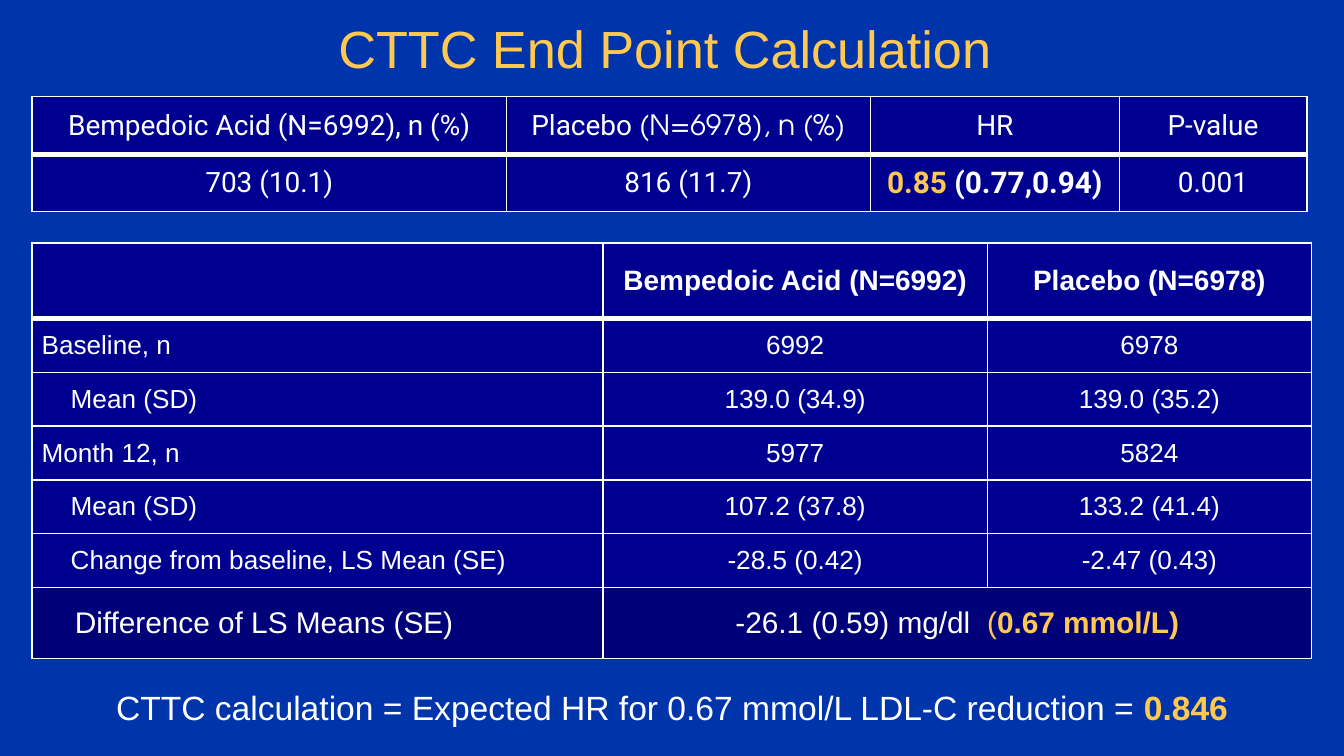
from dataclasses import dataclass

from lxml import etree
from pptx import Presentation
from pptx import util as u
from pptx.dml import color as dml
from pptx.enum import text as t
from pptx.oxml import ns

BLUE, NAVY, DARK_NAVY = "0034AA", "000090", "000078"
WHITE, GOLD, TITLE_GOLD = "FFFFFF", "FFC94F", "FFC850"
CENTER, LEFT = t.PP_ALIGN.CENTER, t.PP_ALIGN.LEFT


@dataclass(frozen=True)
class Span:
    text: str
    size: float
    font: str = "Arial"
    color: str = WHITE
    bold: bool = False


@dataclass(frozen=True)
class Cell:
    spans: tuple[Span, ...] = ()
    align: t.PP_ALIGN = CENTER
    indent: float = 0
    fill: str = NAVY


@dataclass(frozen=True)
class Grid:
    left: float
    top: float
    widths: tuple[float, ...]
    heights: tuple[float, ...]
    rows: list[list[Cell]]


def rgb(value: str) -> dml.RGBColor:
    return dml.RGBColor.from_string(value)


def write(para, spans: tuple[Span, ...], align: t.PP_ALIGN) -> None:
    para.alignment = align
    for span in spans:
        run = para.add_run()
        run.text = span.text
        run.font.size = u.Pt(span.size)
        run.font.name = span.font
        run.font.bold = span.bold
        run.font.color.rgb = rgb(span.color)


def add_text_shadow(run) -> None:
    fill = run.font._element.find(ns.qn("a:solidFill"))
    effects = etree.Element(ns.qn("a:effectLst"))
    shadow = etree.SubElement(effects, ns.qn("a:outerShdw"), blurRad="38100",
                              dist="38100", dir="2700000", algn="tl")
    shade = etree.SubElement(shadow, ns.qn("a:srgbClr"), val="000000")
    etree.SubElement(shade, ns.qn("a:alpha"), val="60000")
    fill.addnext(effects)


def set_borders(cell, top: float, bottom: float) -> None:
    """Give a cell white borders; left and right are always 1 point."""
    properties = cell._tc.get_or_add_tcPr()
    sides = {"L": 1, "R": 1, "T": top, "B": bottom}
    for index, (side, width) in enumerate(sides.items()):
        line = etree.Element(ns.qn(f"a:ln{side}"), w=str(u.Pt(width)))
        fill = etree.SubElement(line, ns.qn("a:solidFill"))
        etree.SubElement(fill, ns.qn("a:srgbClr"), val=WHITE)
        properties.insert(index, line)


def add_grid(page, grid: Grid):
    """Draw a table with a thick line under its first row."""
    frame = page.shapes.add_table(
        len(grid.heights), len(grid.widths), u.Pt(grid.left), u.Pt(grid.top),
        u.Pt(sum(grid.widths)), u.Pt(sum(grid.heights)))
    table = frame.table
    table.first_row = table.horz_banding = False
    for column, width in zip(table.columns, grid.widths):
        column.width = u.Pt(width)
    for row, height in zip(table.rows, grid.heights):
        row.height = u.Pt(height)
    for row_index, row in enumerate(grid.rows):
        for column_index, content in enumerate(row):
            cell = table.cell(row_index, column_index)
            cell.fill.solid()
            cell.fill.fore_color.rgb = rgb(content.fill)
            cell.vertical_anchor = t.MSO_ANCHOR.MIDDLE
            cell.margin_left = u.Pt(5 + content.indent)
            cell.margin_right = u.Pt(5)
            cell.margin_top = cell.margin_bottom = u.Pt(2.5)
            write(cell.text_frame.paragraphs[0], content.spans, content.align)
            set_borders(cell, top=3 if row_index == 1 else 1,
                        bottom=3 if row_index == 0 else 1)
    return table


def result(text: str) -> Cell:
    return Cell((Span(text, 15, "Roboto"),))


def heading(text: str) -> Cell:
    return Cell((Span(text, 15, bold=True),))


def measure(label: str, active: str, placebo: str, indent: float = 0) -> list[Cell]:
    return [Cell((Span(label, 14),), LEFT, indent),
            Cell((Span(active, 14),)), Cell((Span(placebo, 14),))]


HAZARD = Grid(17.3, 51.8, (254, 195, 133.4, 100.4), (31, 30.6), [
    [result("Bempedoic Acid (N=6992), n (%)"),
     Cell((Span("Placebo ", 15, "Roboto"),
           Span("(N=6978), n (%)", 15, "TeX Gyre Adventor"))),
     result("HR"), result("P-value")],
    [result("703 (10.1)"), result("816 (11.7)"),
     Cell((Span("0.85", 16, "Roboto", GOLD, True),
           Span(" (0.77,0.94)", 16, "Roboto", bold=True))),
     result("0.001")],
])

CHOLESTEROL = Grid(17.3, 130.3, (305.8, 205.9, 173.7), (40.4, *[28.8] * 5, 38.2), [
    [Cell(), heading("Bempedoic Acid (N=6992)"), heading("Placebo (N=6978)")],
    measure("Baseline, n", "6992", "6978"),
    measure("Mean (SD)", "139.0 (34.9)", "139.0 (35.2)", 15.6),
    measure("Month 12, n", "5977", "5824"),
    measure("Mean (SD)", "107.2 (37.8)", "133.2 (41.4)", 15.6),
    measure("Change from baseline, LS Mean (SE)", "-28.5 (0.42)", "-2.47 (0.43)", 15.6),
    [Cell((Span("Difference of LS Means (SE)", 16),), LEFT, 17.8, DARK_NAVY),
     Cell((Span("-26.1 (0.59) mg/dl ", 16), Span(" (", 16, color=GOLD),
           Span("0.67 mmol/L)", 16, color=GOLD, bold=True)), fill=DARK_NAVY),
     Cell(fill=DARK_NAVY)],
])


def main() -> None:
    deck = Presentation()
    deck.slide_width, deck.slide_height = u.Pt(720), u.Pt(405)
    page = deck.slides.add_slide(deck.slide_layouts[5])
    page.background.fill.solid()
    page.background.fill.fore_color.rgb = rgb(BLUE)

    title = page.shapes.title
    title.left, title.top = u.Pt(54), u.Pt(0)
    title.width, title.height = u.Pt(612), u.Pt(51)
    title.text_frame.vertical_anchor = t.MSO_ANCHOR.MIDDLE
    title_para = title.text_frame.paragraphs[0]
    write(title_para, (Span("CTTC End Point Calculation ", 28, color=TITLE_GOLD),), CENTER)
    add_text_shadow(title_para.runs[0])

    add_grid(page, HAZARD)
    table = add_grid(page, CHOLESTEROL)
    table.cell(6, 1).merge(table.cell(6, 2))

    box = page.shapes.add_textbox(u.Pt(9.4), u.Pt(364.3), u.Pt(701.2), u.Pt(29))
    box.text_frame.word_wrap = True
    write(box.text_frame.paragraphs[0], (
        Span("CTTC calculation = Expected HR for 0.67 mmol/L LDL-C reduction = ", 18),
        Span("0.846", 18, color=GOLD, bold=True)), CENTER)

    deck.save("out.pptx")


if __name__ == "__main__":
    main()
